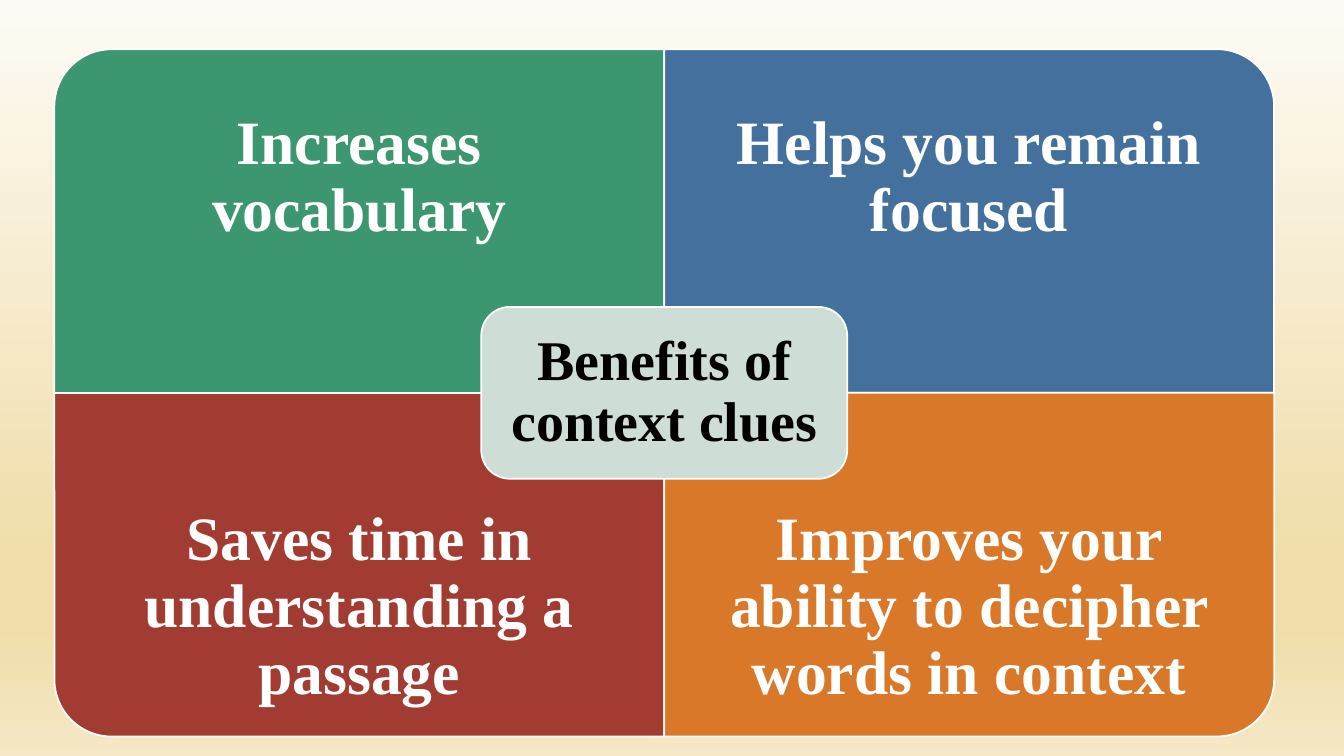
from lxml import etree
from pptx import Presentation
from pptx import util as u
from pptx.dml.color import RGBColor
from pptx.enum import shapes, text
from pptx.oxml import ns

HUES = {
    "green": "3C9770", "blue": "44709D", "red": "A23C33", "orange": "D97828",
    "mint": "CEDDD5", "white": "FFFFFF", "black": "000000",
    "ivory": "FDFBF5", "sand": "F0DDA9", "cream": "F5E8C6",
}


def write(frame, words, size=44, hue="white", inset=0.87):
    frame.word_wrap = True
    frame.vertical_anchor = text.MSO_ANCHOR.MIDDLE
    frame.margin_left = frame.margin_right = u.Cm(inset)
    frame.margin_top = frame.margin_bottom = u.Cm(inset)
    para = frame.paragraphs[0]
    para.alignment = text.PP_ALIGN.CENTER
    para.line_spacing = 0.9
    run = para.add_run()
    run.text = words
    run.font.name = "Times New Roman"
    run.font.size = u.Pt(size)
    run.font.bold = True
    run.font.color.rgb = RGBColor.from_string(HUES[hue])


class Board:
    def __init__(self, slide):
        self.slide = slide
        self.edge = RGBColor.from_string(HUES["white"])

    def wash(self, stops):
        fill = self.slide.background.fill
        fill.gradient()
        fill.gradient_angle = 270
        bands = self.slide.element.xpath(".//a:gsLst")[0]
        for old in list(bands):
            bands.remove(old)
        for place, hue in stops:
            stop = etree.SubElement(bands, ns.qn("a:gs"), pos=str(place * 1000))
            etree.SubElement(stop, ns.qn("a:srgbClr"), val=HUES[hue])

    def panel(self, kind, x, y, w, h, hue, turn=0):
        # A quarter turn swaps the sides around the same centre
        if turn % 180:
            x, y, w, h = x + (w - h) / 2, y + (h - w) / 2, h, w
        item = self.slide.shapes.add_shape(
            kind, u.Cm(x), u.Cm(y), u.Cm(w), u.Cm(h))
        item.rotation = turn
        item.shadow.inherit = False
        item.fill.solid()
        item.fill.fore_color.rgb = RGBColor.from_string(HUES[hue])
        item.line.color.rgb = self.edge
        item.line.width = u.Pt(1.25)

    def label(self, words, x, y, w, h, **style):
        box = self.slide.shapes.add_textbox(u.Cm(x), u.Cm(y), u.Cm(w), u.Cm(h))
        write(box.text_frame, words, **style)


def main():
    deck = Presentation()
    deck.slide_width, deck.slide_height = u.Cm(33.87), u.Cm(19.05)
    board = Board(deck.slides.add_slide(deck.slide_layouts[6]))
    kinds = shapes.MSO_SHAPE

    # Background
    board.wash([(0, "ivory"), (74, "sand"), (83, "sand"), (100, "cream")])

    # Four quarters, each with its round corner outside
    left, top, wide, high, deep = 1.37, 1.24, 15.37, 8.66, 6.5
    parts = [
        ("Increases vocabulary", "green", 0, 0, 270),
        ("Helps you remain focused", "blue", 1, 0, 0),
        ("Saves time in understanding a passage", "red", 0, 1, 180),
        ("Improves your ability to decipher words in context",
         "orange", 1, 1, 90),
    ]
    for words, hue, col, row, turn in parts:
        x, y = left + col * wide, top + row * high
        board.panel(kinds.ROUND_1_RECTANGLE, x, y, wide, high, hue, turn)
        board.label(words, x, y + row * (high - deep), wide, deep)

    # Centre plate
    w, h, pad = wide * 0.6, high / 2, 0.21
    x, y = left + wide - w / 2, top + high - h / 2
    board.panel(kinds.ROUNDED_RECTANGLE, x, y, w, h, "mint")
    board.label("Benefits of context clues", x + pad, y + pad,
                w - 2 * pad, h - 2 * pad, size=40, hue="black", inset=0.42)

    deck.save("out.pptx")


if __name__ == "__main__":
    main()
